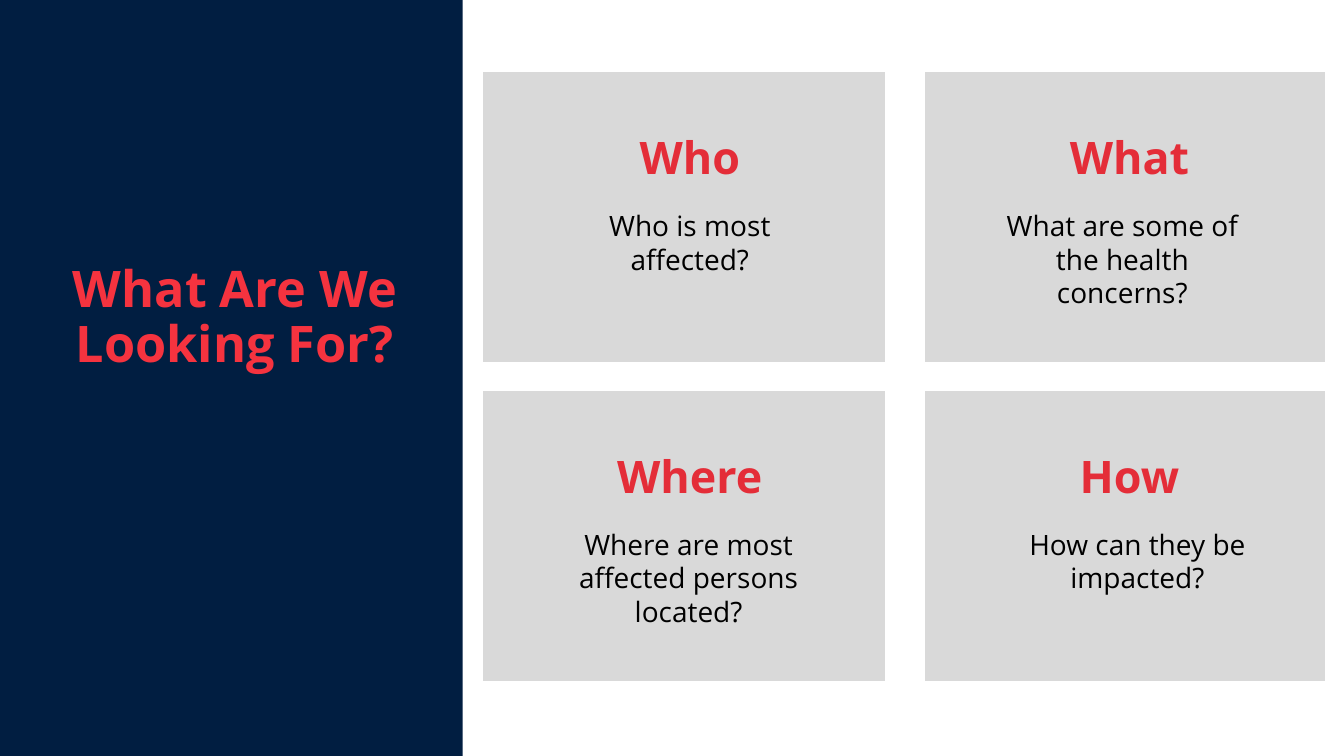
import pptx
import pptx.util
import pptx.dml.color
import pptx.enum.shapes
import pptx.enum.text

Cm = pptx.util.Cm
RGBColor = pptx.dml.color.RGBColor

NAVY = RGBColor(0x01, 0x1E, 0x41)
TITLE_RED = RGBColor(0xF5, 0x33, 0x3F)
HEADING_RED = RGBColor(0xE4, 0x2D, 0x38)
CARD_GREY = RGBColor(0xD9, 0xD9, 0xD9)
WHITE = RGBColor(0xFF, 0xFF, 0xFF)
BLACK = RGBColor(0x00, 0x00, 0x00)


def write(box, text, *, size, color, bold=False, spacing=None):
    """Fill a box with centred text, one paragraph for each line."""
    frame = box.text_frame
    frame.word_wrap = True
    frame.text = text
    for para in frame.paragraphs:
        para.alignment = pptx.enum.text.PP_ALIGN.CENTER
        para.line_spacing = spacing
        for span in para.runs:
            span.font.name = "Open Sans"
            span.font.size = pptx.util.Pt(size)
            span.font.bold = bold
            span.font.color.rgb = color


def add_rectangle(left, top, width, height, fill):
    rectangle = slide.shapes.add_shape(
        pptx.enum.shapes.MSO_SHAPE.RECTANGLE,
        Cm(left), Cm(top), Cm(width), Cm(height))
    rectangle.shadow.inherit = False
    rectangle.fill.solid()
    rectangle.fill.fore_color.rgb = fill
    rectangle.line.fill.background()
    return rectangle


deck = pptx.Presentation()
deck.slide_width, deck.slide_height = Cm(33.87), Cm(19.05)
slide = deck.slides.add_slide(deck.slide_layouts[5])

# Navy side panel, placed behind the title
panel = add_rectangle(-0.05, -0.03, 11.71, 19.08, NAVY)
slide.shapes._spTree.insert(2, panel._element)

# Title
title = slide.shapes.title
title.left, title.top, title.width, title.height = Cm(1.42), Cm(1.78), Cm(9), Cm(12.5)
title.text_frame.auto_size = pptx.enum.text.MSO_AUTO_SIZE.NONE
title.text_frame.vertical_anchor = pptx.enum.text.MSO_ANCHOR.MIDDLE
write(title, "What Are We\nLooking For?", size=36, color=TITLE_RED, bold=True, spacing=0.9)

# Question cards: heading, question, question left, width and height
columns = [(12.14, 10.21, 14.17), (23.27, 10.16, 25.25)]
first_top, row_step, card_height = 1.78, 8.03, 7.39
questions = [
    [("Who", "Who is most affected?", 14.17, 6.43, 1.96),
     ("What", "What are some of the health concerns?", 24.69, 7.19, 2.82)],
    [("Where", "Where are most affected persons located?", 13.06, 8.59, 2.82),
     ("How", "How can they be impacted?", 25.45, 6.43, 1.96)],
]
for row, cards in enumerate(questions):
    top = first_top + row * row_step
    for (card_left, card_width, heading_left), card_text in zip(columns, cards):
        heading, question, left, width, height = card_text
        card = add_rectangle(card_left, top, card_width, card_height, CARD_GREY)
        card.line.color.rgb = WHITE
        card.line.width = pptx.util.Pt(2.25)

        heading_box = slide.shapes.add_textbox(
            Cm(heading_left), Cm(top + 1.37), Cm(6.43), Cm(1.63))
        write(heading_box, heading, size=32, color=HEADING_RED, bold=True)

        question_box = slide.shapes.add_textbox(
            Cm(left), Cm(top + 3.35), Cm(width), Cm(height))
        write(question_box, question, size=20, color=BLACK)

deck.save("out.pptx")
